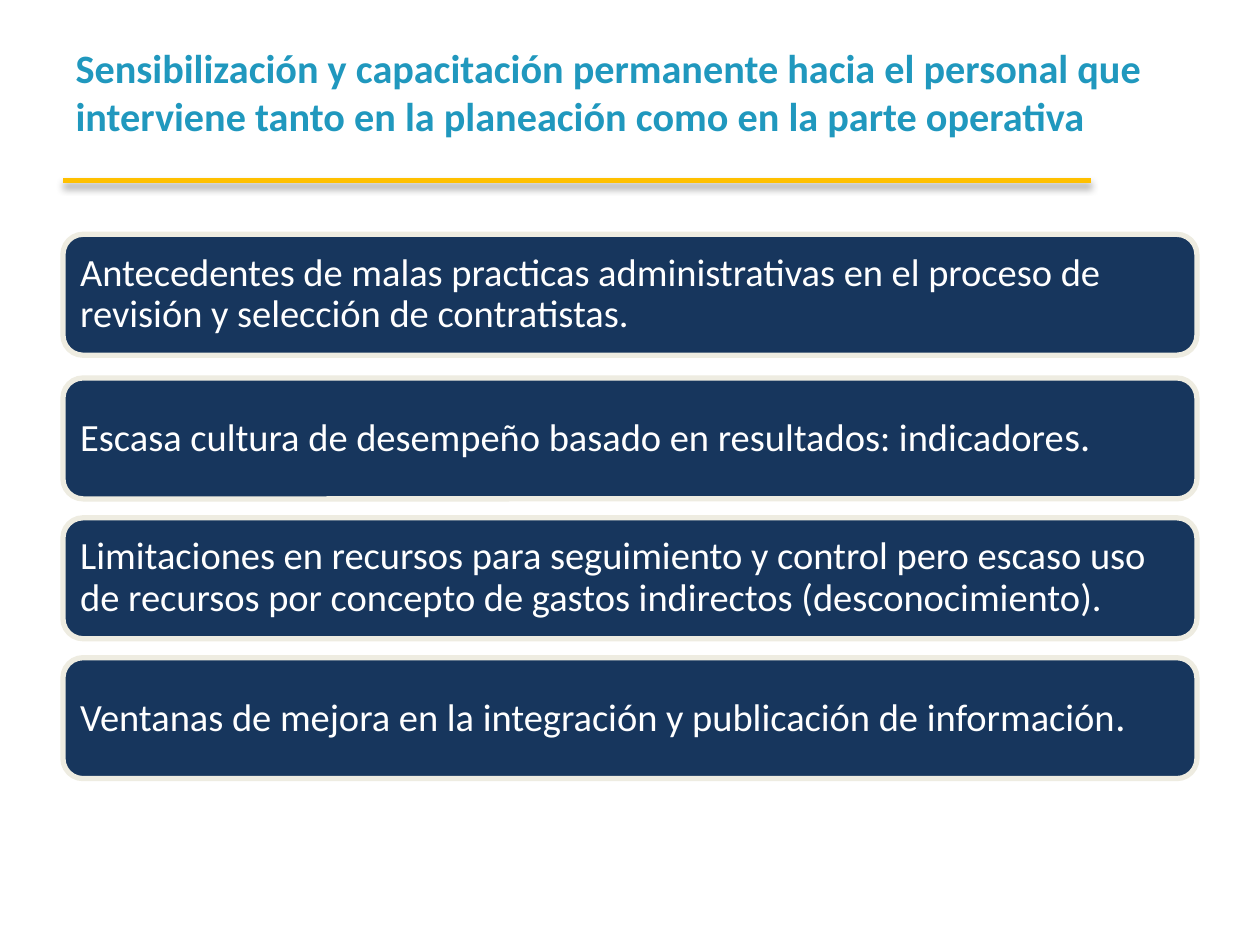
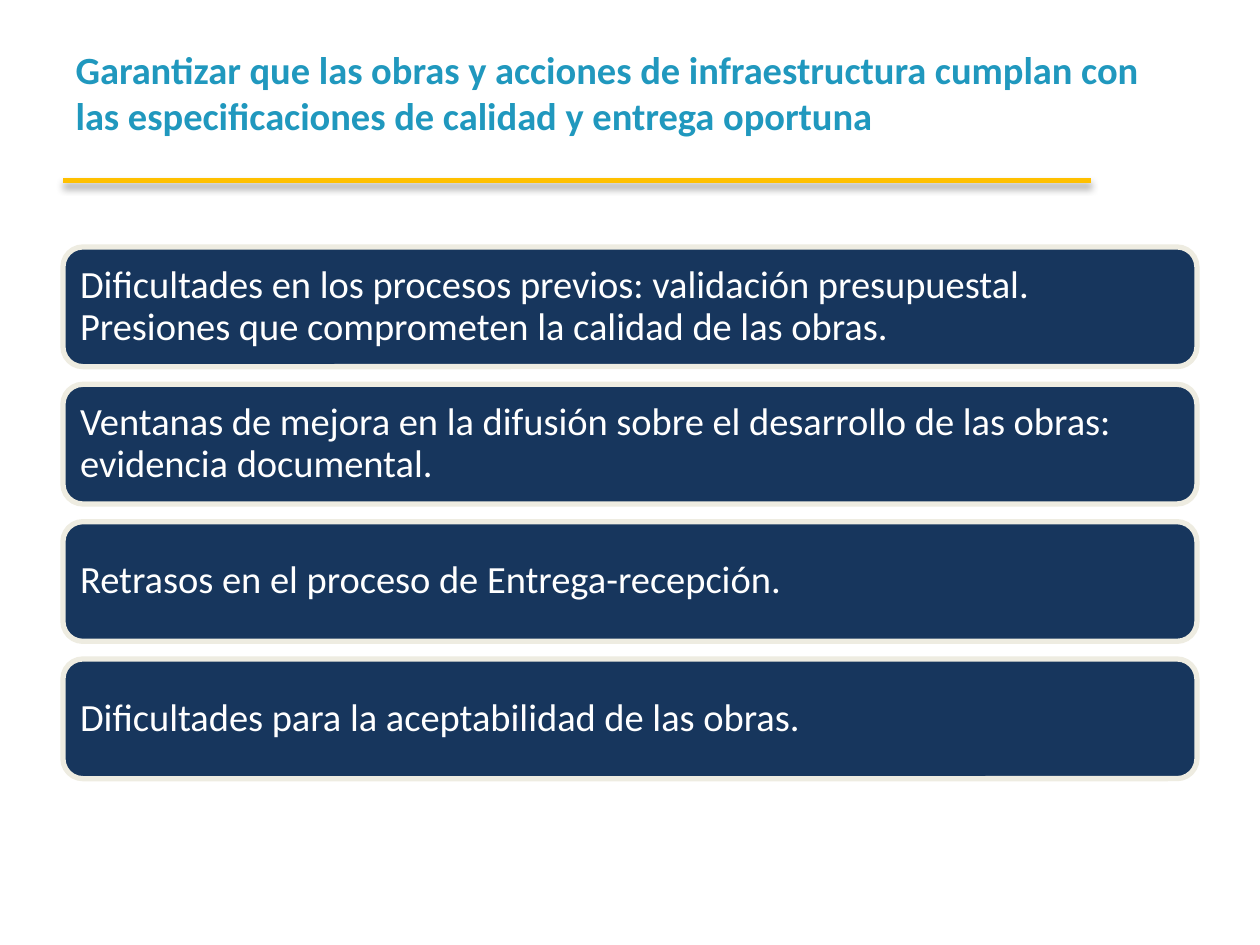
from dataclasses import dataclass

from lxml.etree import SubElement
from pptx import Presentation
from pptx.dml.color import RGBColor
from pptx.enum.shapes import MSO_CONNECTOR, MSO_SHAPE
from pptx.enum.text import MSO_ANCHOR, MSO_AUTO_SIZE, PP_ALIGN
from pptx.oxml.ns import qn
from pptx.slide import Slide
from pptx.util import Emu, Inches, Pt

WIDTH, HEIGHT = Inches(10), Inches(7.5)
COLS, ROWS = 20, 75


@dataclass(frozen=True)
class Theme:
    title: RGBColor = RGBColor.from_string("2098BE")
    rule: RGBColor = RGBColor.from_string("FFC000")
    band: RGBColor = RGBColor.from_string("17365D")
    edge: RGBColor = RGBColor.from_string("EEECE1")
    text: RGBColor = RGBColor.from_string("FFFFFF")
    font: str = "Calibri"
    body_size: int = 22
    ending_size: int = 23
    line_width: int = 3
    line_height: float = 1.22


@dataclass(frozen=True)
class Band:
    text: str
    ending: str = ""  # closing characters set slightly larger


@dataclass(frozen=True)
class BandSlide:
    title: str
    title_size: int
    top: float  # rows from here on
    first_step: float
    step: float
    band_height: float
    bands: tuple[Band, ...]


THEME = Theme()
SLIDES = (
    BandSlide(
        "Sensibilización y capacitación permanente hacia el personal que "
        "interviene tanto en la planeación como en la parte operativa",
        23, 18.6, 11.4, 11.1, 9.6,
        (
            Band("Antecedentes de malas practicas administrativas en el proceso "
                 "de revisión y selección de contratistas."),
            Band("Escasa cultura de desempeño basado en resultados: indicadore", "s."),
            Band("Limitaciones en recursos para seguimiento y control pero escaso "
                 "uso de recursos por concepto de gastos indirectos (desconocimiento)."),
            Band("Ventanas de mejora en la integración y publicación de información", "."),
        ),
    ),
    BandSlide(
        "Garantizar que las obras y acciones de infraestructura cumplan con "
        "las especificaciones de calidad y entrega oportuna",
        22, 19.6, 10.9, 10.9, 9.5,
        (
            Band("Dificultades en los procesos previos: validación presupuestal. "
                 "Presiones que comprometen la calidad de las obras."),
            Band("Ventanas de mejora en la difusión sobre el desarrollo de las "
                 "obras: evidencia documental."),
            Band("Retrasos en el proceso de Entrega-recepción."),
            Band("Dificultades para la aceptabilidad de las obras."),
        ),
    ),
)


def col(n: float) -> Emu:
    return Emu(round(WIDTH * n / COLS))


def row(n: float) -> Emu:
    return Emu(round(HEIGHT * n / ROWS))


def style_run(r, size: int, color: RGBColor, bold: bool = False) -> None:
    r.font.name = THEME.font
    r.font.size = Pt(size)
    r.font.color.rgb = color
    r.font.bold = bold


def add_title(s: Slide, text: str, size: int) -> None:
    sp = s.shapes.title
    sp.left, sp.top, sp.width, sp.height = col(1), row(3), col(18), row(12.5)
    tf = sp.text_frame
    tf.text = text
    tf.word_wrap = True
    tf.auto_size = MSO_AUTO_SIZE.NONE
    # The two lines start where a centred block of three would start
    tf.vertical_anchor = MSO_ANCHOR.TOP
    tf.margin_top = Emu(round((sp.height - 3 * Pt(size) * THEME.line_height) / 2))
    p = tf.paragraphs[0]
    p.alignment = PP_ALIGN.LEFT
    style_run(p.runs[0], size, THEME.title, bold=True)


def add_rule(s: Slide) -> None:
    line = s.shapes.add_connector(
        MSO_CONNECTOR.STRAIGHT, col(1), row(14.3), col(17.32), row(14.3))
    line.line.color.rgb = THEME.rule
    line.line.width = Pt(THEME.line_width)
    # Soft shadow straight below the rule
    effects = SubElement(line._element.spPr, qn("a:effectLst"))
    shadow = SubElement(effects, qn("a:outerShdw"), blurRad=str(Pt(4)),
                        dist=str(Pt(3)), dir="5400000", rotWithShape="0")
    black = SubElement(shadow, qn("a:srgbClr"), val="000000")
    SubElement(black, qn("a:alpha"), val="43000")


def add_band(s: Slide, band: Band, top: float, height: float) -> None:
    sp = s.shapes.add_shape(
        MSO_SHAPE.ROUNDED_RECTANGLE, col(1), row(top), col(18), row(height))
    sp.shadow.inherit = False
    sp.fill.solid()
    sp.fill.fore_color.rgb = THEME.band
    sp.line.color.rgb = THEME.edge
    sp.line.width = Pt(THEME.line_width)
    tf = sp.text_frame
    tf.text = band.text
    tf.word_wrap = True
    tf.vertical_anchor = MSO_ANCHOR.MIDDLE
    tf.margin_left = tf.margin_right = tf.margin_top = tf.margin_bottom = row(0.9)
    p = tf.paragraphs[0]
    p.alignment = PP_ALIGN.LEFT
    p.line_spacing = 0.9
    style_run(p.runs[0], THEME.body_size, THEME.text)
    if band.ending:
        r = p.add_run()
        r.text = band.ending
        style_run(r, THEME.ending_size, THEME.text)


def add_band_slide(prs, content: BandSlide) -> None:
    s = prs.slides.add_slide(prs.slide_layouts[5])
    add_title(s, content.title, content.title_size)
    add_rule(s)
    top = content.top
    for i, band in enumerate(content.bands):
        add_band(s, band, top, content.band_height)
        top += content.step if i else content.first_step


def main() -> None:
    prs = Presentation()
    prs.slide_width, prs.slide_height = WIDTH, HEIGHT
    for content in SLIDES:
        add_band_slide(prs, content)
    prs.save("out.pptx")


if __name__ == "__main__":
    main()
